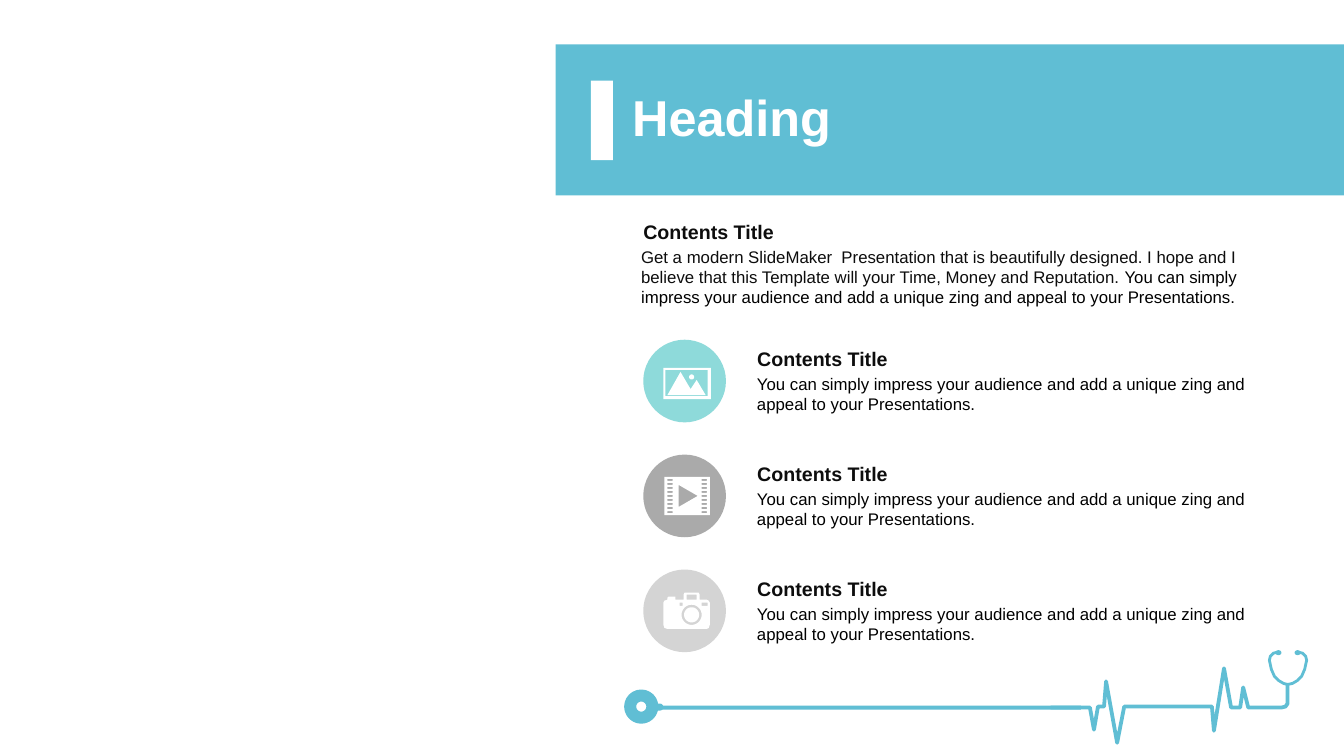
from math import cos, pi, sin

from lxml.etree import SubElement
from pptx import Presentation
from pptx.dml.color import RGBColor
from pptx.enum.shapes import MSO_SHAPE as SHAPE
from pptx.enum.text import MSO_ANCHOR as ANCHOR, MSO_AUTO_SIZE as AUTO, PP_ALIGN as ALIGN
from pptx.oxml.ns import qn
from pptx.util import Pt

EMU_PER_PX = 9144  # 100 px to the inch
BLUE = RGBColor(0x60, 0xBE, 0xD4)
AQUA = RGBColor(0x8E, 0xDA, 0xDA)
GREY = RGBColor(0xAA, 0xAA, 0xAA)
LIGHT_GREY = RGBColor(0xD4, 0xD4, 0xD4)
WHITE = RGBColor(0xFF, 0xFF, 0xFF)
INK = RGBColor(0x0D, 0x0D, 0x0D)
BLACK = RGBColor(0, 0, 0)

INTRO = ("Get a modern SlideMaker  Presentation that is beautifully designed. I hope and I "
         "believe that this Template will your Time, Money and Reputation. ")
PITCH = "You can simply impress your audience and add a unique zing and appeal to your Presentations."


def px(n):
    return round(n * EMU_PER_PX)


def paint(sp, fill=None, line=None, width=0):
    sp.shadow.inherit = False
    if fill is None:
        sp.fill.background()
    else:
        sp.fill.solid()
        sp.fill.fore_color.rgb = fill
    if line is None:
        sp.line.fill.background()
    else:
        sp.line.color.rgb = line
        sp.line.width = Pt(width)
        SubElement(sp.element.spPr.find(qn("a:ln")), qn("a:round"))
    return sp


def add_preset(slide, kind, x, y, w, h, **look):
    return paint(slide.shapes.add_shape(kind, px(x), px(y), px(w), px(h)), **look)


def add_outline(slide, contours, close=True, **look):
    """Draw several contours as one shape; contours inside others become holes."""
    points = [[(px(x), px(y)) for x, y in contour] for contour in contours]
    builder = slide.shapes.build_freeform(*points[0][0])
    for i, contour in enumerate(points):
        if i:
            builder.move_to(*contour[0])
        builder.add_line_segments(contour[1:], close=close)
    return paint(builder.convert_to_shape(), **look)


def add_run(p, text, size=12, color=BLACK, bold=False):
    r = p.add_run()
    r.text = text
    r.font.name = "Arial"
    r.font.size = Pt(size)
    r.font.bold = bold
    r.font.color.rgb = color


def add_textbox(slide, x, y, w, h, runs, inset=10, **style):
    """Each run is a (text, color) pair."""
    tf = slide.shapes.add_textbox(px(x), px(y), px(w), px(h)).text_frame
    tf.word_wrap = True
    tf.margin_left = tf.margin_right = px(inset)
    for text, color in runs:
        add_run(tf.paragraphs[0], text, color=color, **style)


def add_block(slide, x, y, w, h, runs, title_dx=0):
    add_textbox(slide, x, y + 27, w, h, runs)
    add_textbox(slide, x + title_dx, y, w, 34, [("Contents Title", INK)],
                inset=12, size=14, bold=True)


def box(left, top, right, bottom):
    return [(left, top), (right, top), (right, bottom), (left, bottom)]


def circle(cx, cy, radius, steps=36):
    return [(cx + radius * cos(2 * pi * i / steps), cy + radius * sin(2 * pi * i / steps))
            for i in range(steps)]


def add_photo_icon(slide):
    hills = [(675, 369), (685, 386), (691, 377), (700, 392), (662, 392)]
    add_outline(slide, [box(658, 365, 705, 396), box(660, 367, 702, 393), hills,
                        circle(686, 374, 2.5)], fill=WHITE)


def add_film_icon(slide):
    sprockets = [box(x, y, x + 5, y + 2) for y in range(475, 508, 4) for x in (662, 696)]
    play = [(673, 481), (673, 503), (692, 492)]
    add_outline(slide, [box(659, 473, 704, 511), play, *sprockets], fill=WHITE)


def add_camera_icon(slide):
    body = [(679, 588), (693, 588), (694, 590), (694, 595), (701, 595), (703, 596),
            (704, 598), (704, 620), (703, 623), (701, 624), (662, 624), (659, 623),
            (658, 620), (658, 598), (659, 596), (662, 595), (662, 593), (663, 592),
            (670, 592), (670, 595), (678, 595), (678, 590)]
    add_outline(slide, [body, box(681, 590, 691, 595), box(674, 598, 677, 601),
                        box(696, 598, 702, 601), circle(686, 610, 10),
                        circle(686, 610, 7.5)], fill=WHITE)


def add_stethoscope(slide):
    pulse = [(1042, 702), (1081, 702), (1085, 724), (1089, 701), (1095, 701), (1097, 676),
             (1108, 737), (1115, 701), (1202, 701), (1204, 725), (1214, 663), (1221, 702),
             (1230, 702), (1233, 682), (1238, 702), (1271, 702), (1275, 701), (1277, 698),
             (1277, 679)]
    right = [(1288, 647), (1292, 648), (1295, 651), (1296, 655), (1294, 664), (1291, 671),
             (1287, 675), (1282, 678)]
    left = [(2555 - x, y) for x, y in reversed(right)]
    add_outline(slide, [pulse], close=False, line=BLUE, width=2.7)
    add_outline(slide, [right + [(1277, 679)] + left], close=False, line=BLUE, width=2)
    for x in (1265, 1284):
        add_preset(slide, SHAPE.OVAL, x, 645, 6, 5, fill=BLUE)
    add_preset(slide, SHAPE.OVAL, 625, 690, 22, 22, line=BLUE, width=8.57)
    joint = add_preset(slide, SHAPE.ROUNDED_RECTANGLE, 647, 698, 11, 7, fill=BLUE)
    joint.adjustments[0] = 0.5
    add_preset(slide, SHAPE.RECTANGLE, 642, 700, 430, 4, fill=BLUE)


def add_heading(slide, text):
    add_preset(slide, SHAPE.RECTANGLE, 551, 44, 782, 150, fill=BLUE)
    add_preset(slide, SHAPE.RECTANGLE, 586, 80, 22, 79, fill=WHITE)
    title = slide.shapes.title
    title.element.getparent().append(title.element)  # in front of the band
    title.left, title.top, title.width, title.height = px(617), px(80), px(653), px(78)
    tf = title.text_frame
    tf.auto_size = AUTO.NONE
    tf.vertical_anchor = ANCHOR.MIDDLE
    p = tf.paragraphs[0]
    p.alignment = ALIGN.LEFT
    p.line_spacing = 0.9
    add_run(p, text, size=36, color=WHITE, bold=True)


def main():
    prs = Presentation()
    prs.slide_width, prs.slide_height = px(1333), px(750)
    slide = prs.slides.add_slide(prs.slide_layouts[5])
    add_heading(slide, "Heading")
    add_stethoscope(slide)
    add_block(slide, 626, 213, 629, 71, [(INTRO, INK), (PITCH, BLACK)])
    items = [(AQUA, add_photo_icon), (GREY, add_film_icon), (LIGHT_GREY, add_camera_icon)]
    for i, (color, add_icon) in enumerate(items):
        y = 337 + 114 * i
        add_preset(slide, SHAPE.OVAL, 638, y, 82, 82, fill=color)
        add_block(slide, 741, y + 2, 517, 50, [(PITCH, BLACK)], title_dx=-2)
        add_icon(slide)
    prs.save("out.pptx")


if __name__ == "__main__":
    main()
